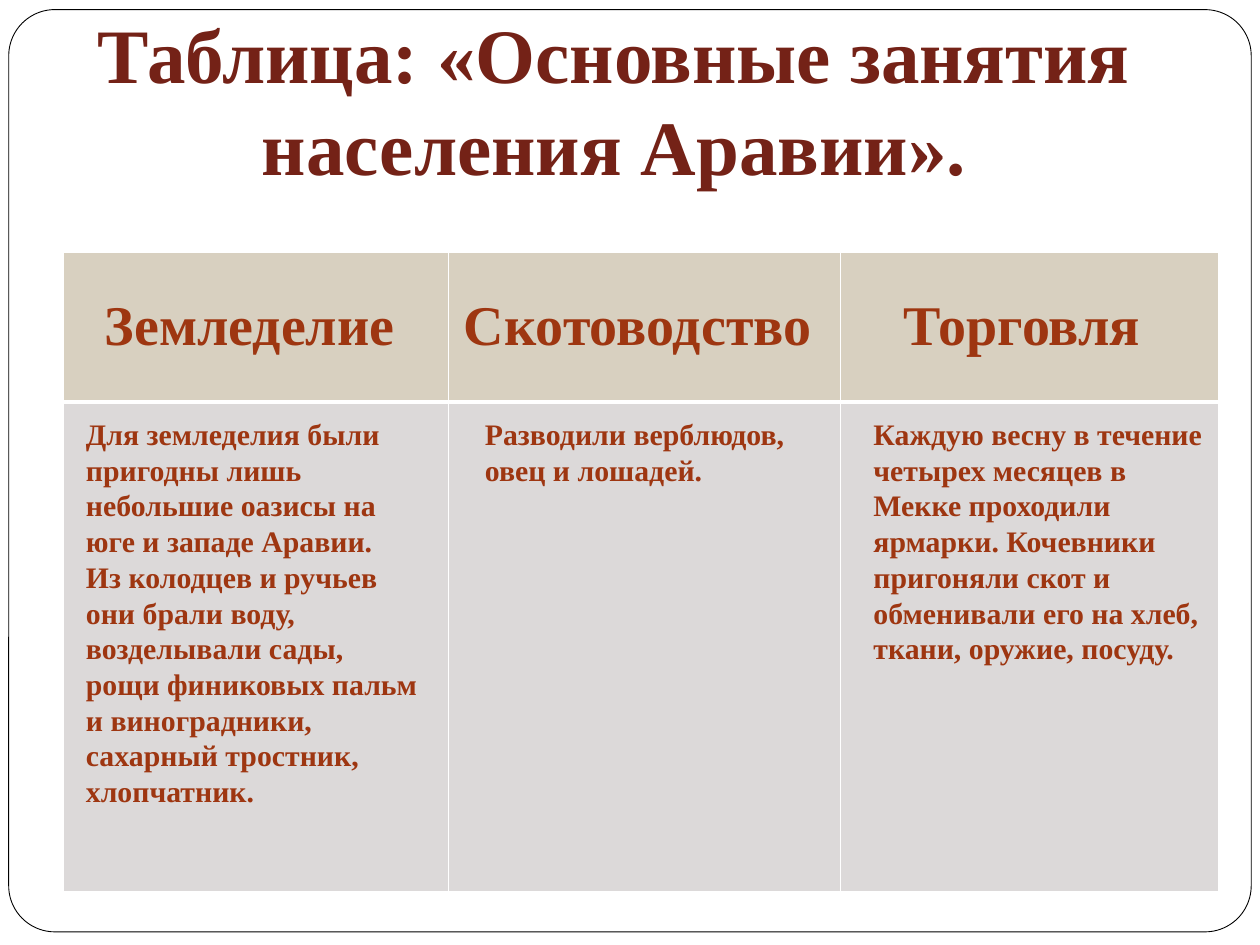
from lxml.etree import SubElement
from pptx import Presentation
from pptx.dml.color import RGBColor
from pptx.enum.shapes import MSO_SHAPE
from pptx.enum.text import MSO_AUTO_SIZE, PP_ALIGN
from pptx.oxml.ns import qn
from pptx.util import Pt

WHITE = RGBColor(0xFF, 0xFF, 0xFF)
BLACK = RGBColor(0, 0, 0)
MAROON = RGBColor(0x74, 0x22, 0x17)
RUST = RGBColor(0x9E, 0x36, 0x11)
SAND = RGBColor(0xD8, 0xD0, 0xC0)
GREY = RGBColor(0xDC, 0xD9, 0xD9)
FONT = "Times New Roman"

HEADING_TOP, HEADING_HEIGHT = 162, 46
BODY_TOP, BODY_WIDTH = 234, 204

# Heading with its left, width and alignment; body paragraphs with left and height
OCCUPATIONS = [
    (("Земледелие ", 42, 209.5, PP_ALIGN.CENTER),
     (["Для земледелия были пригодны лишь небольшие оазисы на юге и западе Аравии.",
       "Из колодцев и ручьев они брали воду, возделывали сады, рощи финиковых пальм "
       "и виноградники, сахарный тростник, хлопчатник."], 42, 275)),
    (("Скотоводство", 258, 227, PP_ALIGN.LEFT),
     (["Разводили верблюдов, овец и лошадей."], 270, 48)),
    (("Торговля", 504, 160, PP_ALIGN.CENTER),
     (["Каждую весну в течение четырех месяцев в Мекке проходили ярмарки. "
       "Кочевники  пригоняли скот и обменивали его на хлеб, ткани, оружие, посуду."],
      492, 214.5)),
]


def add_frame(slide, left, top, width, height):
    frame = slide.shapes.add_shape(MSO_SHAPE.ROUNDED_RECTANGLE,
                                   Pt(left), Pt(top), Pt(width), Pt(height))
    frame.adjustments[0] = 0.05
    frame.shadow.inherit = False
    frame.fill.solid()
    frame.fill.fore_color.rgb = WHITE
    frame.line.color.rgb = BLACK
    frame.line.width = Pt(0.5)


def add_text(slide, left, top, width, height, paragraphs, size, color,
             align=PP_ALIGN.LEFT, wrap=True):
    box = slide.shapes.add_textbox(Pt(left), Pt(top), Pt(width), Pt(height))
    frame = box.text_frame
    frame.word_wrap = wrap
    frame.auto_size = MSO_AUTO_SIZE.SHAPE_TO_FIT_TEXT
    for index, text in enumerate(paragraphs):
        paragraph = frame.add_paragraph() if index else frame.paragraphs[0]
        paragraph.alignment = align
        run = paragraph.add_run()
        run.text = text
        run.font.name = FONT
        run.font.size = Pt(size)
        run.font.bold = True
        run.font.color.rgb = color


def style_cell(cell, color, bottom_width):
    properties = cell._tc.get_or_add_tcPr()
    for side, width in (("L", 1), ("R", 1), ("T", 1), ("B", bottom_width)):
        border = SubElement(properties, qn(f"a:ln{side}"), w=str(Pt(width)))
        fill = SubElement(border, qn("a:solidFill"))
        SubElement(fill, qn("a:srgbClr"), val=str(WHITE))
    cell.fill.solid()
    cell.fill.fore_color.rgb = color


def add_occupations(slide, left, top, width, height):
    column_widths = (220.3, 223.9, 216)
    rows = ((85.7, SAND, 3), (280, GREY, 1))
    table = slide.shapes.add_table(len(rows), len(column_widths), Pt(left), Pt(top),
                                   Pt(width), Pt(height)).table
    for column, column_width in zip(table.columns, column_widths):
        column.width = Pt(column_width)
    for row, (row_height, color, bottom_width) in zip(table.rows, rows):
        row.height = Pt(row_height)
        for cell in row.cells:
            style_cell(cell, color, bottom_width)

    # Headings and descriptions over the table cells
    for heading, description in OCCUPATIONS:
        name, name_left, name_width, align = heading
        add_text(slide, name_left, HEADING_TOP, name_width, HEADING_HEIGHT,
                 [name], 32, RUST, align, wrap=False)
        paragraphs, body_left, body_height = description
        add_text(slide, body_left, BODY_TOP, BODY_WIDTH, body_height,
                 paragraphs, 17, RUST)


def main():
    presentation = Presentation()
    presentation.slide_width = Pt(720)
    presentation.slide_height = Pt(540)
    slide = presentation.slides.add_slide(presentation.slide_layouts[6])

    add_frame(slide, 5, 5.5, 710, 527)
    add_occupations(slide, 36, 144, 660.2, 365.7)
    # Slide title
    add_text(slide, 0, 0, 702, 114, ["Таблица: «Основные занятия населения Аравии»."],
             44, MAROON, PP_ALIGN.CENTER)
    presentation.save("out.pptx")


if __name__ == "__main__":
    main()
